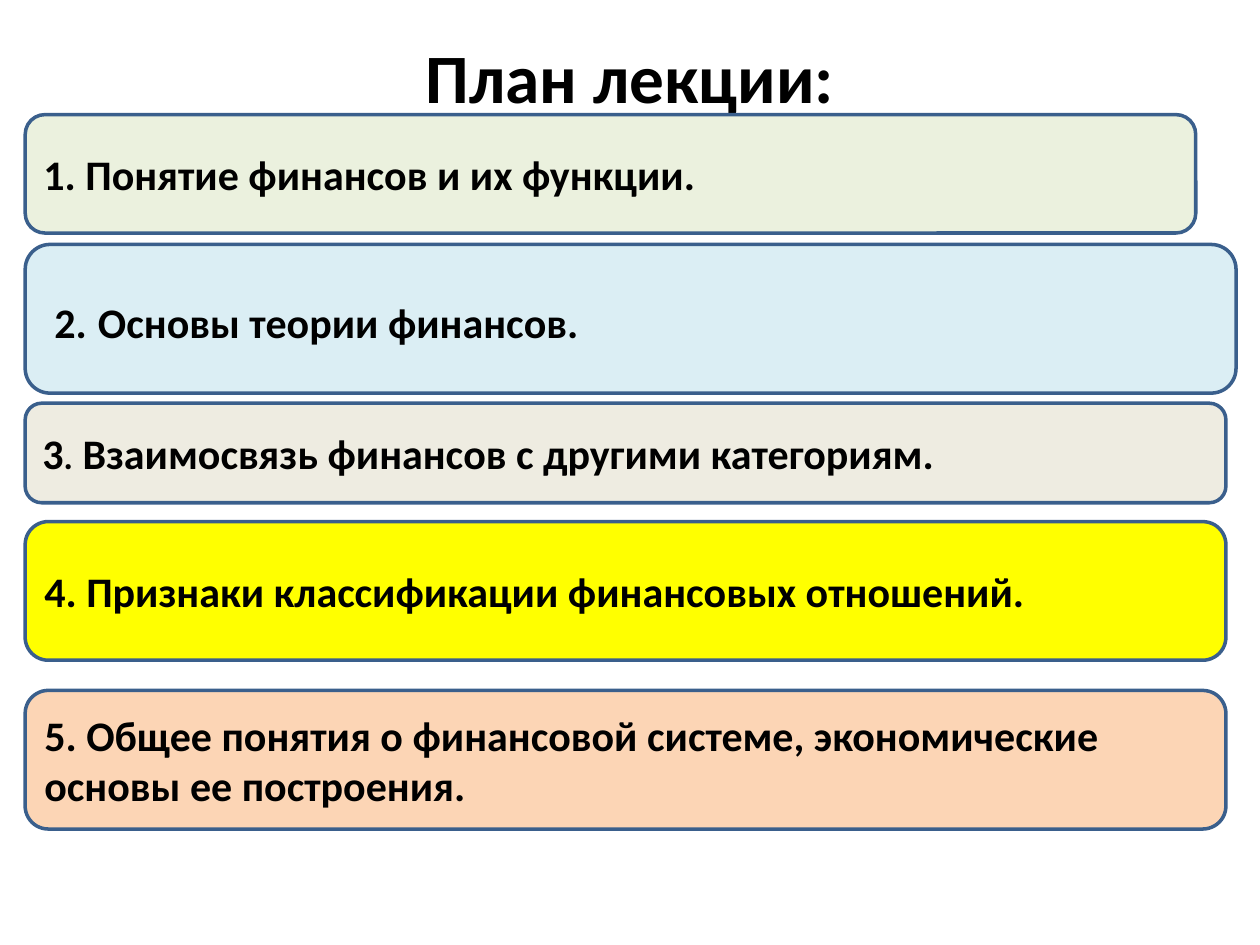
from pptx import Presentation
from pptx.dml.color import RGBColor
from pptx.enum.shapes import MSO_SHAPE
from pptx.enum.text import MSO_ANCHOR, PP_ALIGN
from pptx.util import Inches, Pt

ROUNDED = MSO_SHAPE.ROUNDED_RECTANGLE
MIDDLE = MSO_ANCHOR.MIDDLE
LEFT, CENTER = PP_ALIGN.LEFT, PP_ALIGN.CENTER

FONT = "Calibri"
TEXT_COLOR = "000000"
BORDER_COLOR = "3A5F8C"
BOX_LEFT = 0.2

TITLE = [("План лекции:", 39.6)]

# top, width, height, fill, runs of (text, size)
TOPICS = [
    (0.91, 9.29, 0.94, "EBF1DE", [("1. Понятие финансов и их функции.", 24)]),
    (1.94, 9.61, 1.18, "DBEEF4",
     [(" 2.", 24), (" ", 28), ("Основы теории финансов.", 24)]),
    (3.2, 9.53, 0.79, "EEECE1",
     [("3", 24), (".", 20), (" Взаимосвязь финансов с другими категориям.", 24)]),
    (4.14, 9.53, 1.1, "FFFF00",
     [("4. Признаки классификации финансовых отношений.", 24)]),
    (5.48, 9.53, 1.1, "FCD5B5",
     [("5. Общее понятия о финансовой системе, экономические основы ее построения.", 24)]),
]


def color(value):
    return RGBColor.from_string(value)


def write(shape, runs, alignment):
    frame = shape.text_frame
    frame.word_wrap = True
    frame.vertical_anchor = MIDDLE
    paragraph = frame.paragraphs[0]
    paragraph.alignment = alignment
    for text, size in runs:
        run = paragraph.add_run()
        run.text = text
        for name, value in {"name": FONT, "size": Pt(size), "bold": True}.items():
            setattr(run.font, name, value)
        run.font.color.rgb = color(TEXT_COLOR)


def add_topic(slide, top, width, height, fill, runs):
    box = slide.shapes.add_shape(
        ROUNDED, Inches(BOX_LEFT), Inches(top), Inches(width), Inches(height))
    box.shadow.inherit = False
    box.fill.solid()
    box.fill.fore_color.rgb = color(fill)
    box.line.color.rgb = color(BORDER_COLOR)
    box.line.width = Pt(2)
    write(box, runs, LEFT)


def main():
    presentation = Presentation()
    presentation.slide_width = Inches(10)
    presentation.slide_height = Inches(7.5)
    slide = presentation.slides.add_slide(presentation.slide_layouts[6])
    title = slide.shapes.add_textbox(Inches(0.5), Inches(0.3), Inches(9), Inches(0.61))
    write(title, TITLE, CENTER)
    for topic in TOPICS:
        add_topic(slide, *topic)
    presentation.save("out.pptx")


if __name__ == "__main__":
    main()
